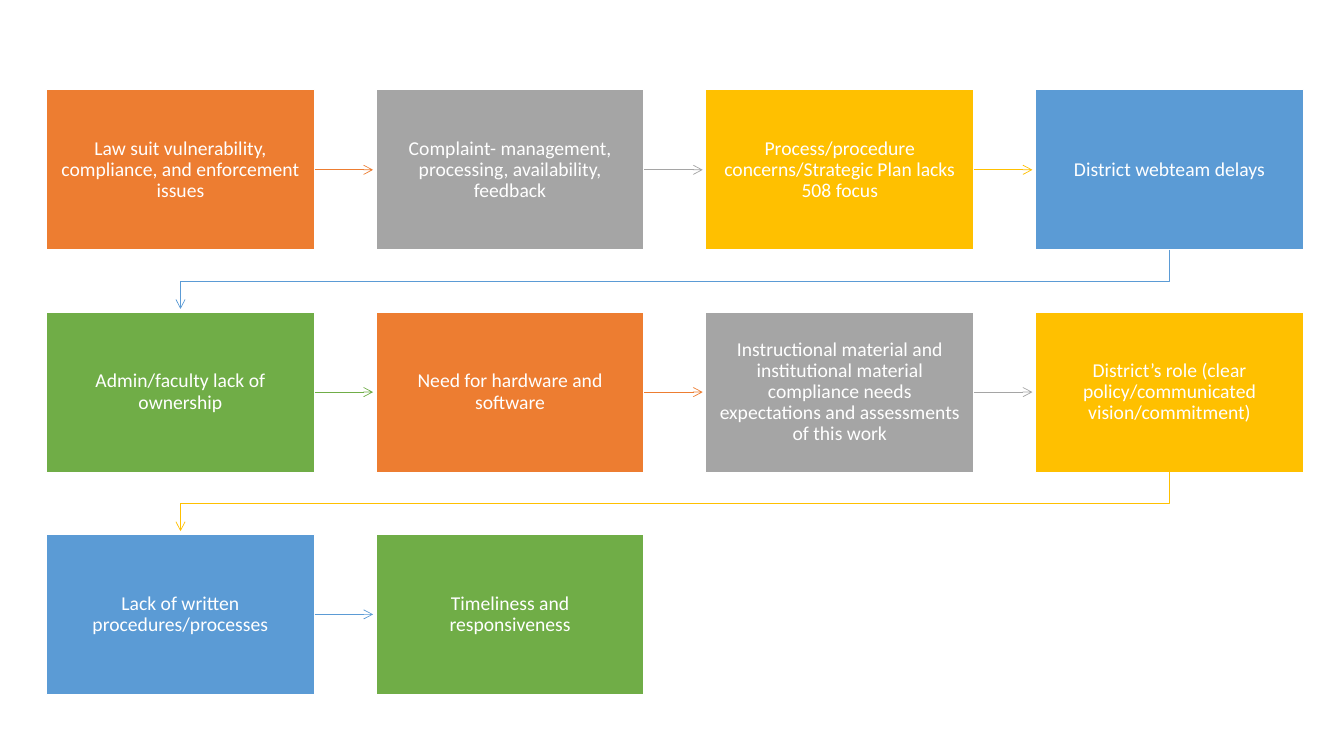
from lxml.etree import SubElement
from pptx import Presentation
from pptx.dml.color import RGBColor
from pptx.enum.shapes import MSO_CONNECTOR as CONNECTOR, MSO_SHAPE as SHAPE
from pptx.enum.text import MSO_ANCHOR as ANCHOR, PP_ALIGN as ALIGN
from pptx.oxml.ns import qn
from pptx.util import Inches, Pt

ORANGE = RGBColor(0xED, 0x7D, 0x31)
GRAY = RGBColor(0xA5, 0xA5, 0xA5)
GOLD = RGBColor(0xFF, 0xC0, 0x00)
BLUE = RGBColor(0x5B, 0x9B, 0xD5)
GREEN = RGBColor(0x70, 0xAD, 0x47)
WHITE = RGBColor(0xFF, 0xFF, 0xFF)
COLORS = [ORANGE, GRAY, GOLD, BLUE, GREEN]

CONCERNS = [
    "Law suit vulnerability, compliance, and enforcement issues",
    "Complaint- management, processing, availability, feedback",
    "Process/procedure concerns/Strategic Plan lacks 508 focus",
    "District webteam delays",
    "Admin/faculty lack of ownership",
    "Need for hardware and software",
    "Instructional material and institutional material compliance needs "
    "expectations and assessments of this work",
    "District’s role (clear policy/communicated vision/commitment)",
    "Lack of written procedures/processes",
    "Timeliness and responsiveness",
]

# Grid of steps
COLUMNS = 4
LEFT, TOP = Inches(0.46), Inches(0.89)
BOX_W, BOX_H = Inches(2.66), Inches(1.59)
STEP_X, STEP_Y = Inches(3.27), Inches(2.205)
TIP_GAP = Inches(0.03)


def write_text(shape, text, size=14, color=WHITE, font="Calibri"):
    frame = shape.text_frame
    frame.word_wrap = True
    frame.vertical_anchor = ANCHOR.MIDDLE
    frame.margin_left = frame.margin_right = Inches(0.13)
    frame.margin_top = frame.margin_bottom = Inches(0.14)
    paragraph = frame.paragraphs[0]
    paragraph.alignment = ALIGN.CENTER
    paragraph.line_spacing = 0.9
    run = paragraph.add_run()
    run.text = text
    run.font.size = Pt(size)
    run.font.name = font
    run.font.color.rgb = color


def style_arrow(arrow, color):
    arrow.line.color.rgb = color
    arrow.line.width = Pt(0.5)
    SubElement(arrow.line._get_or_add_ln(), qn("a:tailEnd"), type="arrow")
    SubElement(arrow._element.spPr, qn("a:effectLst"))


deck = Presentation()
deck.slide_width, deck.slide_height = Inches(13.33), Inches(7.5)
slide = deck.slides.add_slide(deck.slide_layouts[6])
shapes = slide.shapes

for index, concern in enumerate(CONCERNS):
    row, column = divmod(index, COLUMNS)
    x, y = LEFT + column * STEP_X, TOP + row * STEP_Y
    color = COLORS[index % len(COLORS)]

    # Step box
    step = shapes.add_shape(SHAPE.RECTANGLE, x, y, BOX_W, BOX_H)
    step.shadow.inherit = False
    step.fill.solid()
    step.fill.fore_color.rgb = color
    step.line.color.rgb = WHITE
    step.line.width = Pt(1)
    write_text(step, concern)

    # Arrow to the next step
    if index == len(CONCERNS) - 1:
        continue
    if column < COLUMNS - 1:
        middle = y + BOX_H // 2
        arrow = shapes.add_connector(
            CONNECTOR.STRAIGHT, x + BOX_W, middle, x + STEP_X - TIP_GAP, middle)
        arrow.begin_connect(step, 3)
    else:
        # Bent arrow back to the first column of the next row
        start_x, end_x = x + BOX_W // 2, LEFT + BOX_W // 2
        bottom, next_top = y + BOX_H, y + STEP_Y
        bend = (bottom + next_top) // 2
        outline = shapes.build_freeform(start_x, bottom)
        outline.add_line_segments(
            [(start_x, bend), (end_x, bend), (end_x, next_top - TIP_GAP)],
            close=False)
        arrow = outline.convert_to_shape()
        arrow.fill.background()
    style_arrow(arrow, color)

deck.save("out.pptx")
